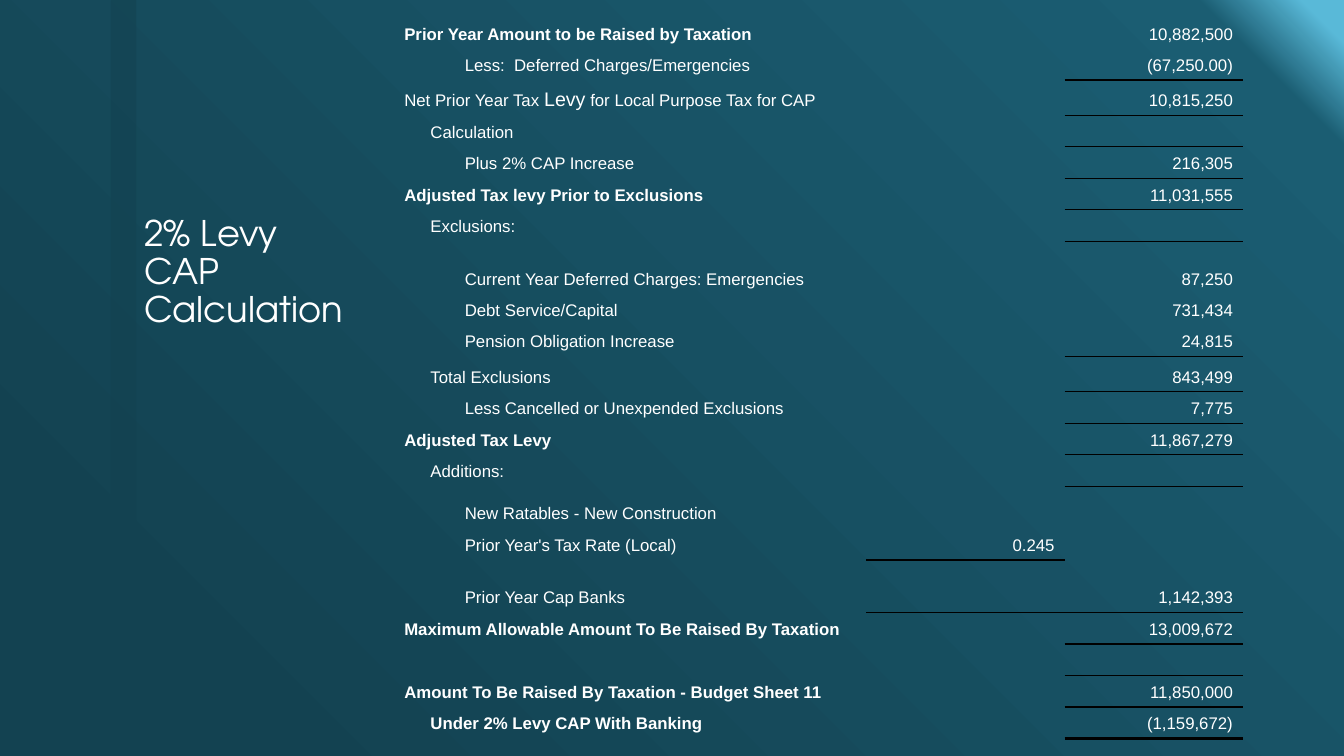
"""Build the 2% levy CAP calculation slide."""
import lxml.etree
import pptx
import pptx.dml.color
import pptx.enum.shapes
import pptx.enum.text
import pptx.oxml
import pptx.oxml.ns
import pptx.util

Inches = pptx.util.Inches
Pt = pptx.util.Pt
NAMESPACE = pptx.oxml.ns.nsdecls("a")
NO_GRID_STYLE = "{2D5ABB26-0587-4C30-8999-92F81FD0307C}"


def color(value):
    return pptx.dml.color.RGBColor.from_string(value)


def add_border(cell, side, points):
    cell._tc.get_or_add_tcPr().append(pptx.oxml.parse_xml(
        f'<a:ln{side} {NAMESPACE} w="{Pt(points)}"><a:solidFill>'
        f'<a:srgbClr val="000000"/></a:solidFill></a:ln{side}>'))


deck = pptx.Presentation()
deck.slide_width, deck.slide_height = Inches(13.33), Inches(7.5)
page = deck.slides.add_slide(deck.slide_layouts[5])

page.background.fill.solid()
background = page.background._cSld.bg.bgPr
stops = "".join(
    f'<a:gs pos="{percent * 1000}"><a:srgbClr val="{shade}"/></a:gs>'
    for percent, shade in [(2, "59B9D8"), (7, "1B5D72"), (87, "134251")])
background.replace(background[0], pptx.oxml.parse_xml(
    f'<a:gradFill {NAMESPACE} rotWithShape="1"><a:gsLst>{stops}</a:gsLst>'
    f'<a:lin ang="{135 * 60000}" scaled="0"/></a:gradFill>'))

bar = page.shapes.add_shape(
    pptx.enum.shapes.MSO_SHAPE.RECTANGLE,
    Inches(1.1), 0, Inches(0.25), Inches(7.5))
bar.shadow.inherit = False
bar.line.fill.background()
bar.fill.solid()
bar.fill.fore_color.rgb = color("134251")
bar_color = bar._element.spPr.find(".//" + pptx.oxml.ns.qn("a:srgbClr"))
lxml.etree.SubElement(bar_color, pptx.oxml.ns.qn("a:alpha"), val="60000")

title = page.shapes.title
title.left, title.top = Inches(1.33), Inches(2.58)
title.width, title.height = Inches(2.33), Inches(0.75)
title.text_frame.text = "2% Levy CAP Calculation"
title.text_frame.word_wrap = True
title.text_frame.auto_size = pptx.enum.text.MSO_AUTO_SIZE.NONE
title.text_frame.vertical_anchor = pptx.enum.text.MSO_ANCHOR.BOTTOM
para = title.text_frame.paragraphs[0]
para.alignment = pptx.enum.text.PP_ALIGN.LEFT
para.line_spacing = 0.9
para.font.size = Pt(25.2)
para.font.name = "TeX Gyre Adventor"
para.font.color.rgb = color("FFFFFF")

# Each row: first column, columns spanned, bold, label, rate, amount, line below
levy_rows = [
    (0, 3, True, "Prior Year Amount to be Raised by Taxation", "", "10,882,500", 0),
    (2, 1, False, "Less:  Deferred Charges/Emergencies", "", "(67,250.00)", 1),
    (0, 4, False, "Net Prior Year Tax |Levy| for Local Purpose Tax for CAP", "",
     "10,815,250", 1),
    (1, 2, False, "Calculation", "", "", 0),
    (2, 1, False, "Plus 2% CAP Increase", "", "216,305", 1),
    (0, 3, True, "Adjusted Tax levy Prior to Exclusions", "", "11,031,555", 1),
    (1, 2, False, "Exclusions:", "", "", 0),
    (2, 1, False, "Current Year Deferred Charges: Emergencies", "", "87,250", 0),
    (2, 1, False, "Debt Service/Capital", "", "731,434", 0),
    (2, 1, False, "Pension Obligation Increase", "", "24,815", 1),
    (1, 2, False, "Total Exclusions", "", "843,499", 1),
    (2, 2, False, "Less Cancelled or Unexpended Exclusions", "", "7,775", 1),
    (0, 3, True, "Adjusted Tax Levy", "", "11,867,279", 1),
    (1, 2, False, "Additions:", "", "", 0),
    (2, 1, False, "New Ratables - New Construction", "", "", 0),
    (2, 1, False, "Prior Year's Tax Rate (Local)", "0.245", "", 0),
    (2, 1, False, "Prior Year Cap Banks", "", "1,142,393", 1),
    (0, 4, True, "Maximum Allowable Amount To Be Raised By Taxation", "",
     "13,009,672", 2),
    (0, 1, False, "", "", "", 1),
    (0, 4, True, "Amount To Be Raised By Taxation - Budget Sheet 11", "",
     "11,850,000", 2),
    (1, 2, True, "Under 2% Levy CAP With Banking", "", "(1,159,672)", 2),
]
tall_rows = {2: 0.35, 7: 0.52, 10: 0.35, 14: 0.42, 16: 0.52}

table = page.shapes.add_table(
    len(levy_rows), 5, Inches(3.91), Inches(0.17), Inches(8.42), Inches(7.17)).table
table.first_row = table.horz_banding = False
table._tbl.tblPr.find(pptx.oxml.ns.qn("a:tableStyleId")).text = NO_GRID_STYLE
for column, width in zip(table.columns, [0.26, 0.34, 4.08, 1.97, 1.77]):
    column.width = Inches(width)

line_above = [0] * 5
for row, (first, spanned, bold, label, rate, amount, line) in enumerate(levy_rows):
    table.rows[row].height = Inches(tall_rows.get(row, 5 / 16))
    texts = {3: rate, 4: amount, first: label}
    line_below = [0, 0, 0, 1 if rate else 0, line]
    for column in range(5):
        cell = table.cell(row, column)
        cell.vertical_anchor = pptx.enum.text.MSO_ANCHOR.BOTTOM
        for side, points in (("T", line_above[column]), ("B", line_below[column])):
            if points:
                add_border(cell, side, points)
        cell.fill.background()
        para = cell.text_frame.paragraphs[0]
        if not texts.get(column):
            para._p.get_or_add_endParaRPr().set("sz", "1200")
            continue
        para.font.size = Pt(12)
        para.font.name = "Arial"
        para.font.bold = bold and column == first
        para.font.color.rgb = color("FFFFFF")
        if column > 2:
            para.alignment = pptx.enum.text.PP_ALIGN.RIGHT
        for piece in texts[column].split("|"):
            span = para.add_run()
            span.text = piece
            if piece == "Levy":
                span.font.size = Pt(14)
    if spanned > 1:
        table.cell(row, first).merge(table.cell(row, first + spanned - 1))
    line_above = line_below

deck.save("out.pptx")
